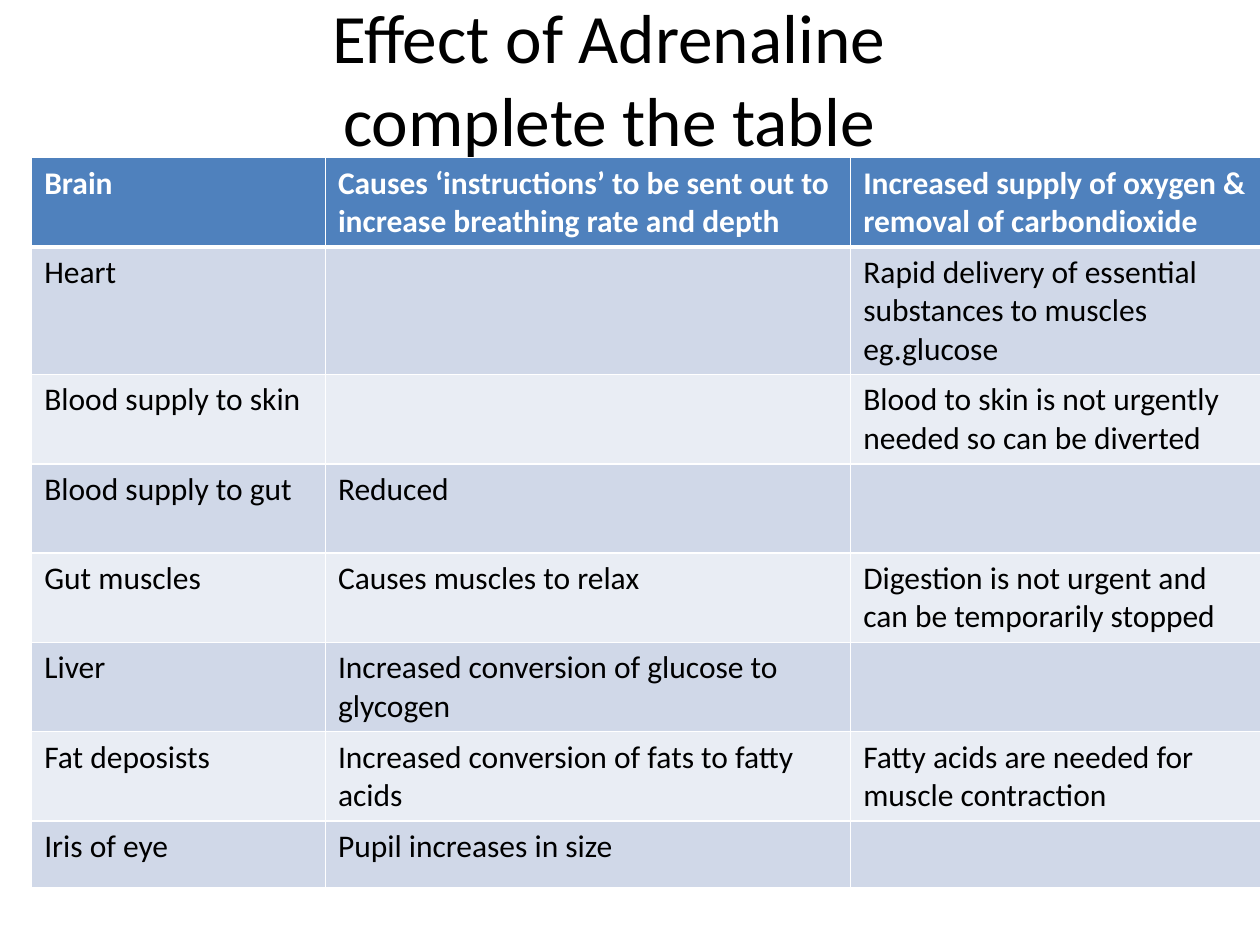
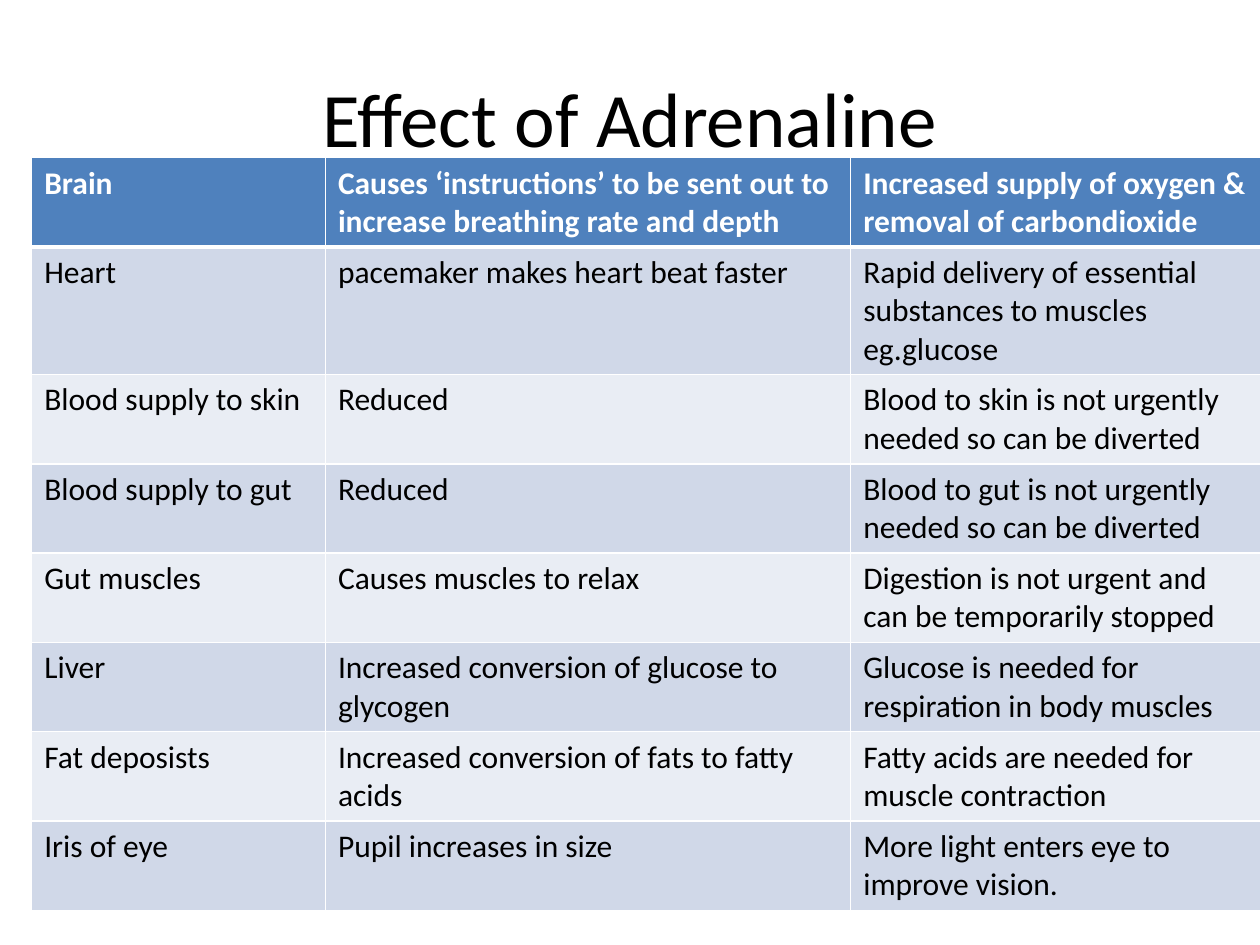
from lxml import etree
from pptx import Presentation
from pptx.dml.color import RGBColor
from pptx.enum import text
from pptx.oxml import ns
from pptx.util import Cm, Pt

FONT = "Calibri"
BLACK = RGBColor(0x00, 0x00, 0x00)
WHITE = RGBColor(0xFF, 0xFF, 0xFF)
HEADER_BLUE = RGBColor(0x4F, 0x81, 0xBD)
BANDS = (RGBColor(0xD0, 0xD8, 0xE8), RGBColor(0xE9, 0xED, 0xF4))

EFFECTS = [
    ("Brain",
     "Causes ‘instructions’ to be sent out to increase breathing rate and depth",
     "Increased supply of oxygen & removal of carbondioxide"),
    ("Heart",
     "pacemaker makes heart beat faster",
     "Rapid delivery of essential substances to muscles eg.glucose"),
    ("Blood supply to skin",
     "Reduced",
     "Blood to skin is not urgently needed so can be diverted"),
    ("Blood supply to gut",
     "Reduced",
     "Blood to gut is not urgently needed so can be diverted"),
    ("Gut muscles",
     "Causes muscles to relax",
     "Digestion is not urgent and can be temporarily stopped"),
    ("Liver",
     "Increased conversion of glucose to glycogen",
     "Glucose is needed for respiration in body muscles"),
    ("Fat deposists",
     "Increased conversion of fats to fatty acids",
     "Fatty acids are needed for muscle contraction"),
    ("Iris of eye",
     "Pupil increases in size",
     "More light enters eye to improve vision."),
]

# Title box is left, top, width, height in cm; gaps are the (row, column) cells left to fill in.
SLIDES = [
    {"title": "Effect of Adrenaline\vcomplete the table", "size": 39.6,
     "box": (1.27, 0.64, 22.02, 1.83),
     "gaps": {(1, 1), (2, 1), (3, 2), (5, 2), (7, 2)}, "last_row": 1.35},
    {"title": "Effect of Adrenaline", "size": 44,
     "box": (1.27, 0.76, 22.86, 3.18),
     "gaps": set(), "last_row": 1.8},
]

TABLE_LEFT, TABLE_TOP = 0.64, 3.18
COLUMN_WIDTHS = (5.92, 10.59, 8.26)
TWO_LINES, THREE_LINES = 1.8, 2.57


def style(font, **values):
    font.name = FONT
    font.color.rgb = values.pop("color")
    for name, value in values.items():
        setattr(font, name, value)


def add_title(slide, content):
    frame = slide.shapes.add_textbox(*map(Cm, content["box"])).text_frame
    frame.word_wrap = True
    frame.vertical_anchor = text.MSO_ANCHOR.MIDDLE
    heading = frame.paragraphs[0]
    heading.text = content["title"]
    heading.alignment = text.PP_ALIGN.CENTER
    for run in heading.runs:
        style(run.font, color=BLACK, size=Pt(content["size"]))


def add_borders(cell, row):
    """Draw white cell edges, thick between the header and the body."""
    widths = {"lnL": 1, "lnR": 1,
              "lnT": 3 if row == 1 else 1,
              "lnB": 3 if row == 0 else 1}
    properties = cell._tc.get_or_add_tcPr()
    for edge, width in widths.items():
        line = etree.SubElement(properties, ns.qn(f"a:{edge}"), w=str(Pt(width)))
        fill = etree.SubElement(line, ns.qn("a:solidFill"))
        etree.SubElement(fill, ns.qn("a:srgbClr"), val=str(WHITE))


def add_effects_table(slide, content):
    heights = [TWO_LINES] * len(EFFECTS)
    heights[1] = THREE_LINES
    heights[-1] = content["last_row"]
    table = slide.shapes.add_table(
        len(EFFECTS), len(COLUMN_WIDTHS), Cm(TABLE_LEFT), Cm(TABLE_TOP),
        Cm(sum(COLUMN_WIDTHS)), Cm(sum(heights))).table
    for column, width in zip(table.columns, COLUMN_WIDTHS):
        column.width = Cm(width)
    for r, (effect, height) in enumerate(zip(EFFECTS, heights)):
        table.rows[r].height = Cm(height)
        header = r == 0
        for c, wording in enumerate(effect):
            cell = table.cell(r, c)
            add_borders(cell, r)
            cell.fill.solid()
            cell.fill.fore_color.rgb = HEADER_BLUE if header else BANDS[(r - 1) % 2]
            if (r, c) not in content["gaps"]:
                run = cell.text_frame.paragraphs[0].add_run()
                run.text = wording
                style(run.font, color=WHITE if header else BLACK,
                      size=Pt(18), bold=header)


def main():
    deck = Presentation()
    deck.slide_width, deck.slide_height = Cm(25.4), Cm(19.05)
    for content in SLIDES:
        slide = deck.slides.add_slide(deck.slide_layouts[6])
        add_title(slide, content)
        add_effects_table(slide, content)
    deck.save("out.pptx")


if __name__ == "__main__":
    main()
